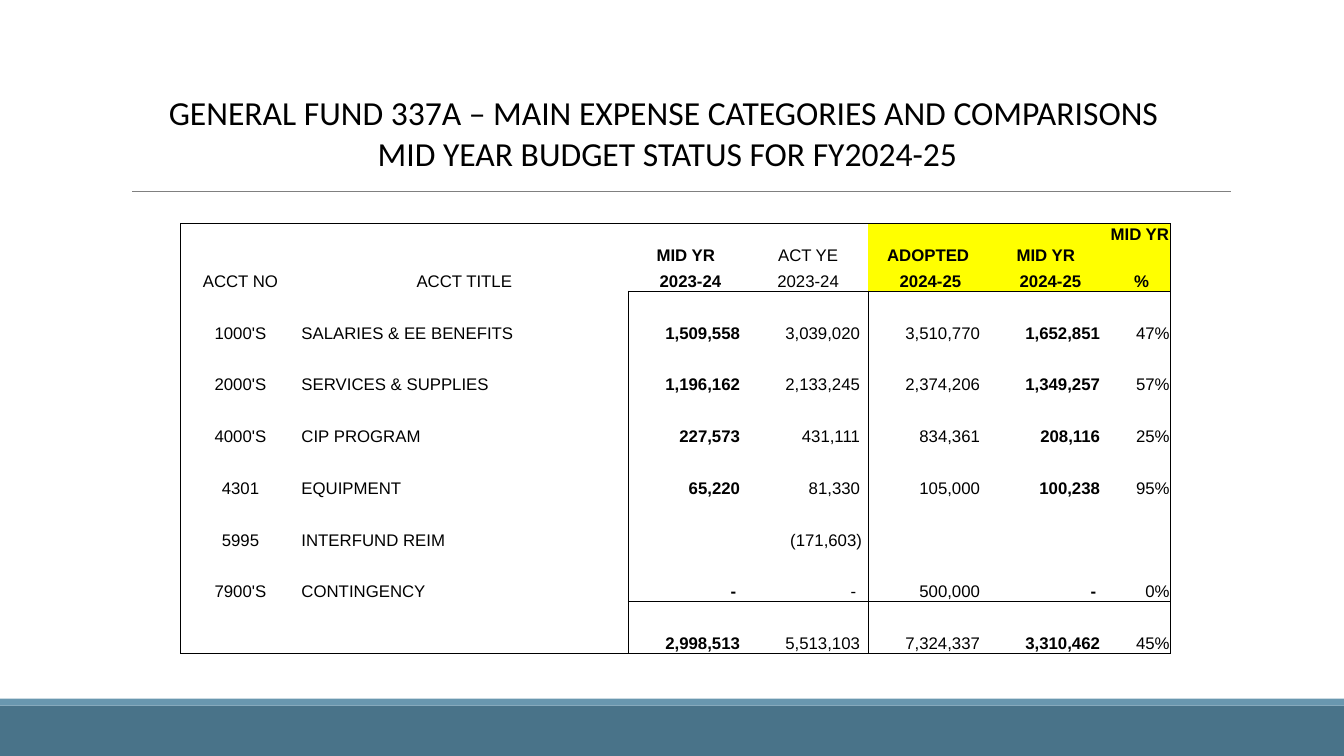
from lxml.etree import SubElement
from pptx import Presentation
from pptx.dml.color import RGBColor
from pptx.enum.shapes import MSO_CONNECTOR, MSO_SHAPE
from pptx.enum.text import MSO_ANCHOR, PP_ALIGN
from pptx.oxml.ns import qn
from pptx.util import Inches, Pt

COLORS = {"text": "000000", "rule": "808080", "band": "497389",
          "strip": "6997AF", "highlight": "FFFF00"}
PLAIN_TABLE_STYLE = "{2D5ABB26-0587-4C30-8999-92F81FD0307C}"

TITLE = ["GENERAL FUND 337A – MAIN EXPENSE CATEGORIES AND COMPARISONS ",
         "MID YEAR BUDGET STATUS FOR FY2024-25"]
HEADERS = [
    ["ACCT NO", "ACCT TITLE", "MID YR ", "ACT YE", "ADOPTED", "MID YR ", "MID YR"],
    ["", "", " 2023-24", "2023-24", " 2024-25", " 2024-25", " %"],
]
ACCOUNTS = [
    ["1000'S", "SALARIES & EE BENEFITS", "1,509,558", "3,039,020", "3,510,770", "1,652,851", "47%"],
    ["2000'S", "SERVICES & SUPPLIES", "1,196,162", "2,133,245", "2,374,206", "1,349,257", "57%"],
    ["4000'S", "CIP PROGRAM", "227,573", "431,111", "834,361", "208,116", "25%"],
    ["4301", "EQUIPMENT", "65,220", "81,330", "105,000", "100,238", "95%"],
    ["5995", "INTERFUND REIM", "", "(171,603)", "", "", ""],
    ["7900'S", "CONTINGENCY", "-", "-", "500,000", "-", "0%"],
    ["", "", "2,998,513", "5,513,103", "7,324,337", "3,310,462", "45%"],
]
COLUMN_WIDTHS = [8.93, 24.38, 8.93, 8.93, 8.93, 8.93, 4.65]
HEADER_HEIGHT, ROW_HEIGHT = 5.47, 54.8 / 16
NUMBER_COLUMNS = range(2, 6)
BOLD_COLUMNS = (2, 5)
PERCENT_COLUMN = 6


def assign(target, values):
    for name, value in values.items():
        setattr(target, name, value)


def color(name):
    return RGBColor.from_string(COLORS[name])


class BudgetSlide:
    """Draws on one slide; all lengths are percentages of the slide's size."""

    def __init__(self, presentation):
        self.width, self.height = presentation.slide_width, presentation.slide_height
        self.slide = presentation.slides.add_slide(presentation.slide_layouts[5])
        self.shapes = self.slide.shapes

    def x(self, share):
        return int(self.width * share / 100)

    def y(self, share):
        return int(self.height * share / 100)

    def box(self, left, top, width, height):
        return self.x(left), self.y(top), self.x(width), self.y(height)

    def add_text(self, paragraph, text, size, font, bold, alignment):
        paragraph.alignment = alignment
        run = paragraph.add_run()
        run.text = text
        assign(run.font, {"size": Pt(size), "name": font, "bold": bold})
        run.font.color.rgb = color("text")

    def title(self, lines, *box):
        title = self.shapes.title
        assign(title, dict(zip(("left", "top", "width", "height"), self.box(*box))))
        frame = title.text_frame
        assign(frame, {"vertical_anchor": MSO_ANCHOR.MIDDLE, "word_wrap": True})
        for index, line in enumerate(lines):
            paragraph = frame.add_paragraph() if index else frame.paragraphs[0]
            self.add_text(paragraph, line, 24, "Calibri", False, PP_ALIGN.CENTER)

    def rule(self, left, right, top):
        line = self.shapes.add_connector(MSO_CONNECTOR.STRAIGHT, self.x(left), self.y(top),
                                         self.x(right), self.y(top))
        line.line.color.rgb = color("rule")
        line.line.width = Pt(0.5)
        SubElement(line._element.spPr, qn("a:effectLst"))

    def bar(self, fill, *box):
        bar = self.shapes.add_shape(MSO_SHAPE.RECTANGLE, *self.box(*box))
        bar.shadow.inherit = False
        bar.fill.solid()
        bar.fill.fore_color.rgb = color(fill)
        bar.line.fill.background()

    def borders(self, cell, sides):
        """Add a thin line on each of the sides, given in the order L, R, T, B."""
        properties = cell._tc.get_or_add_tcPr()
        for side in sides:
            line = SubElement(properties, qn(f"a:ln{side}"), w=str(Pt(0.5)))
            fill = SubElement(line, qn("a:solidFill"))
            SubElement(fill, qn("a:srgbClr"), val=COLORS["text"])

    def cell(self, cell, text, sides, fill=None, bold=False, alignment=PP_ALIGN.LEFT,
             right=0.01, anchor=MSO_ANCHOR.BOTTOM):
        assign(cell, {"margin_left": Inches(0.01), "margin_right": Inches(right),
                      "margin_top": Inches(0.01), "margin_bottom": 0,
                      "vertical_anchor": anchor})
        self.borders(cell, sides)
        if fill:
            cell.fill.solid()
            cell.fill.fore_color.rgb = color(fill)
        else:
            cell.fill.background()
        paragraph = cell.text_frame.paragraphs[0]
        if text:
            self.add_text(paragraph, text, 12, "Arial", bold, alignment)
        else:
            SubElement(paragraph._p, qn("a:endParaRPr"), sz="1200")

    def table(self, rows, left, top):
        heights = [HEADER_HEIGHT] + [ROW_HEIGHT] * (len(rows) - 1)
        frame = self.shapes.add_table(len(rows), len(COLUMN_WIDTHS), *self.box(
            left, top, sum(COLUMN_WIDTHS), sum(heights)))
        table = frame.table
        assign(table, {"first_row": False, "horz_banding": False})
        table._tbl.tblPr.find(qn("a:tableStyleId")).text = PLAIN_TABLE_STYLE
        for column, width in zip(table.columns, COLUMN_WIDTHS):
            column.width = self.x(width)
        for row, height in zip(table.rows, heights):
            row.height = self.y(height)
        for row, texts in enumerate(rows):
            for column, text in enumerate(texts):
                self.cell(table.cell(row, column), text,
                          table_sides(row, column, len(rows)),
                          **cell_format(row, column, text))
        for column in (0, 1):
            table.cell(0, column).merge(table.cell(1, column))


def table_sides(row, column, row_count):
    """Frame the table, its header, the total and the two year groups."""
    sides = {
        "L": column == 0,
        "R": column == PERCENT_COLUMN or (row > 1 and column in (1, 3)),
        "T": row == 0,
        "B": row in (1, row_count - 1) or (row == row_count - 3 and column > 1),
    }
    return [side for side, shown in sides.items() if shown]


def cell_format(row, column, text):
    if row < len(HEADERS):
        recent = column > 3
        above_percent = row == 0 and column == PERCENT_COLUMN
        return {"alignment": PP_ALIGN.CENTER,
                "bold": recent or column == 2,
                "fill": "highlight" if recent else None,
                "right": 0 if above_percent else 0.01,
                "anchor": MSO_ANCHOR.TOP if above_percent else MSO_ANCHOR.BOTTOM}
    if column in NUMBER_COLUMNS:
        gap = 0.12 if text == "-" else 0.06 if text.endswith(")") else 0.08
        return {"alignment": PP_ALIGN.RIGHT, "bold": column in BOLD_COLUMNS, "right": gap}
    alignments = {0: PP_ALIGN.CENTER, 1: PP_ALIGN.LEFT, PERCENT_COLUMN: PP_ALIGN.RIGHT}
    return {"alignment": alignments[column]}


def main():
    presentation = Presentation()
    assign(presentation, {"slide_width": Inches(13.33), "slide_height": Inches(7.5)})
    budget = BudgetSlide(presentation)
    budget.rule(9.83, 91.6, 25.33)
    budget.bar("band", 0, 93.33, 100, 6.67)
    budget.bar("strip", 0, 92.4, 100, 0.93)
    budget.title(TITLE, 5.1, 11.47, 89.12, 12.13)
    blank = [""] * len(COLUMN_WIDTHS)
    rows = HEADERS + [row for account in ACCOUNTS for row in (blank, account)]
    budget.table(rows, 13.43, 29.6)
    presentation.save("out.pptx")


if __name__ == "__main__":
    main()
